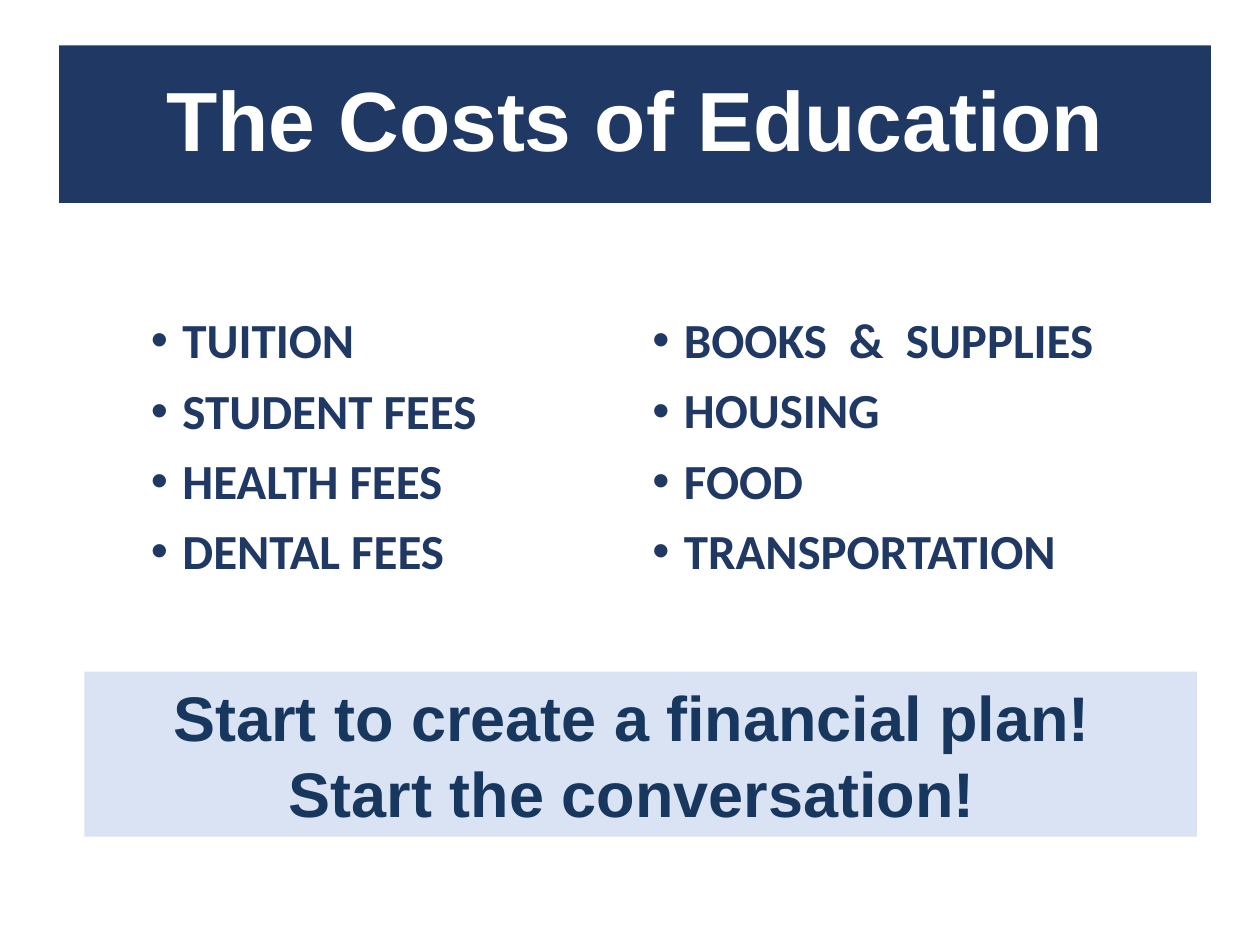
from lxml import etree
from pptx import Presentation
from pptx.dml.color import RGBColor
from pptx.enum.text import MSO_ANCHOR, MSO_AUTO_SIZE, PP_ALIGN
from pptx.oxml.ns import qn
from pptx.util import Inches, Pt

CENTER, LEFT = PP_ALIGN.CENTER, PP_ALIGN.LEFT
MIDDLE, TOP = MSO_ANCHOR.MIDDLE, MSO_ANCHOR.TOP
NO_FIT = MSO_AUTO_SIZE.NONE
NAVY = RGBColor(0x20, 0x38, 0x64)
DEEP_BLUE = RGBColor(0x17, 0x37, 0x5E)
PALE_BLUE = RGBColor(0xDA, 0xE3, 0xF3)
WHITE = RGBColor(0xFF, 0xFF, 0xFF)

TITLE = "The Costs of Education"
TITLE_AREA = (0.47, 0.36, 9.14, 1.25)
COST_LISTS = [
    ((1.1, 1.85, 3.8, 3.38),
     ["TUITION", "STUDENT FEES", "HEALTH FEES", "DENTAL FEES"]),
    ((5.08, 1.85, 5, 3.06),
     ["BOOKS  &  SUPPLIES", "HOUSING", "FOOD", "TRANSPORTATION"]),
]
MESSAGE = "Start to create a financial plan!  Start the conversation! "
MESSAGE_AREA = (0.67, 5.33, 8.83, 1.31)

TITLE_FONT = {"name": "Arial", "size": Pt(48), "bold": True}
LIST_FONT = {"name": "Calibri", "size": Pt(28), "bold": True}
MESSAGE_FONT = {"name": "Arial", "size": Pt(36), "bold": True}
LIST_TOP_MARGIN = 0.66
INDENT = 0.25


def set_values(target, values):
    for name, value in values.items():
        setattr(target, name, value)


def place(shape, area):
    lengths = map(Inches, area)
    set_values(shape, dict(zip(("left", "top", "width", "height"), lengths)))


def write(shape, lines, font, color, anchor, para_format):
    frame = shape.text_frame
    set_values(frame, {"word_wrap": True, "auto_size": NO_FIT,
                       "vertical_anchor": anchor})
    frame.text = "\n".join(lines)
    for para in frame.paragraphs:
        set_values(para, para_format)
        for span in para.runs:
            set_values(span.font, font)
            span.font.color.rgb = color


def add_bullet(para):
    properties = para._p.get_or_add_pPr()
    properties.set("marL", str(Inches(INDENT)))
    properties.set("indent", str(-Inches(INDENT)))
    etree.SubElement(properties, qn("a:buFont"), typeface="Arial")
    etree.SubElement(properties, qn("a:buChar"), char="•")


def fill_solid(shape, color):
    shape.fill.solid()
    shape.fill.fore_color.rgb = color


deck = Presentation()
deck.slide_width, deck.slide_height = Inches(10), Inches(7.5)
page = deck.slides.add_slide(deck.slide_layouts[5])

title = page.shapes.title
place(title, TITLE_AREA)
fill_solid(title, NAVY)
write(title, [TITLE], TITLE_FONT, WHITE, MIDDLE,
      {"alignment": CENTER, "line_spacing": 0.9})

for area, costs in COST_LISTS:
    box = page.shapes.add_textbox(*map(Inches, area))
    write(box, costs, LIST_FONT, NAVY, TOP,
          {"alignment": LEFT, "line_spacing": 0.9, "space_before": Pt(10)})
    box.text_frame.margin_top = Inches(LIST_TOP_MARGIN)
    box.text_frame.paragraphs[0].space_before = Pt(0)
    for para in box.text_frame.paragraphs:
        add_bullet(para)

banner = page.shapes.add_textbox(*map(Inches, MESSAGE_AREA))
fill_solid(banner, PALE_BLUE)
write(banner, [MESSAGE], MESSAGE_FONT, DEEP_BLUE, MIDDLE, {"alignment": CENTER})

deck.save("out.pptx")
